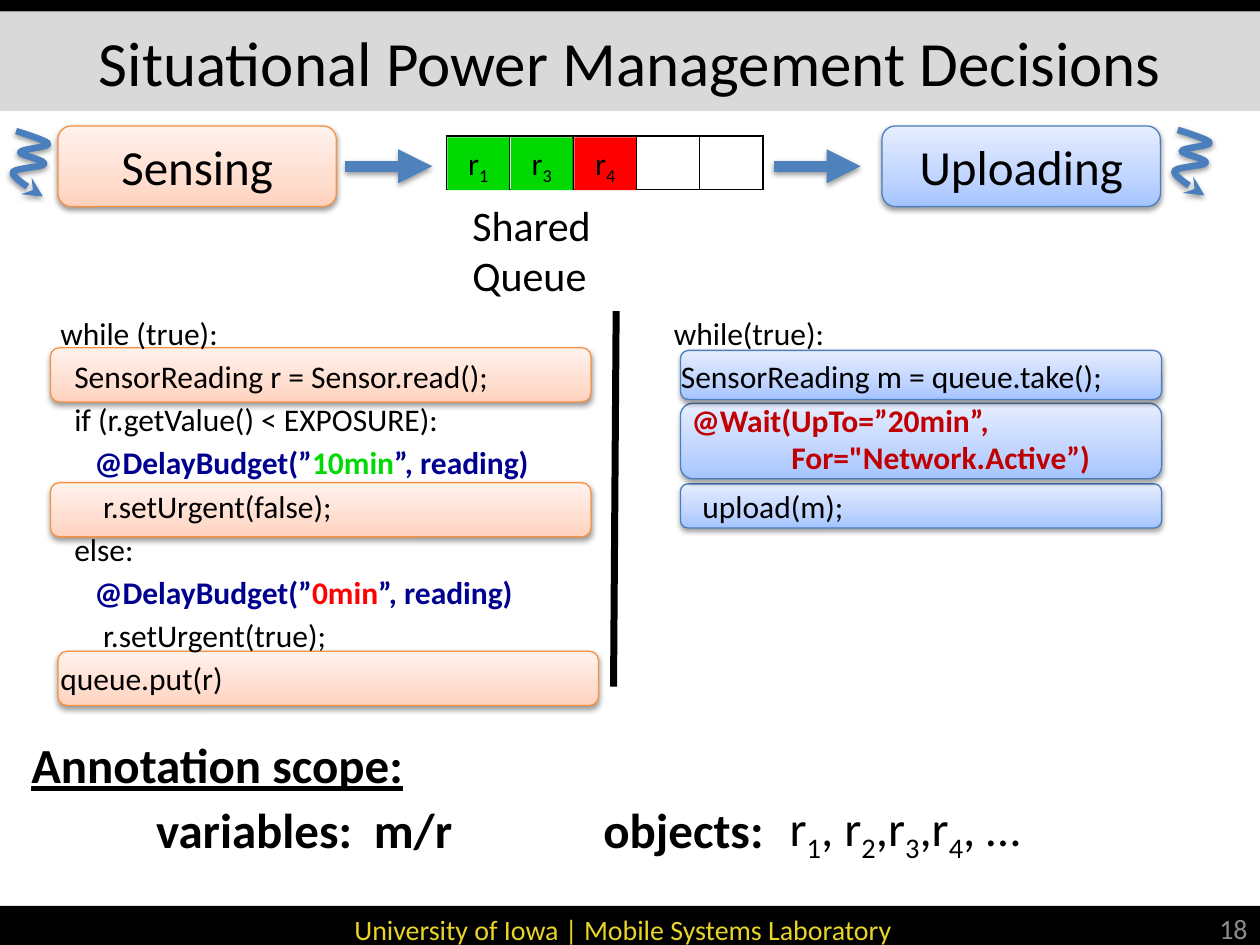
from copy import deepcopy

from lxml import etree
from pptx import Presentation
from pptx.dml.color import RGBColor
from pptx.enum import shapes as kinds, text as txt
from pptx.oxml.ns import qn
from pptx.util import Pt

FONT = "Calibri"
LEFT, CENTER, RIGHT = txt.PP_ALIGN.LEFT, txt.PP_ALIGN.CENTER, txt.PP_ALIGN.RIGHT
RECT, ROUND = kinds.MSO_SHAPE.RECTANGLE, kinds.MSO_SHAPE.ROUNDED_RECTANGLE
ORANGE = ("F69240", ["FFD2BD", "FFDED0", "FFF2ED"])
BLUE = ("4B7EBC", ["A4C4FF", "BFD4FF", "E6EEFF"])
GREEN, RED, NAVY, CRIMSON = "00DA02", "FF0000", "000090", "C00000"
LINE_PITCH = 25

TITLE = "Situational Power Management Decisions"
FOOTER = "University of Iowa | Mobile Systems Laboratory"
STAGES = [("Sensing", 33.1, ORANGE), ("Uploading", 504, BLUE)]
HIGHLIGHTS = [
    (388.8, 276.5, 275, 25.2, BLUE),
    (388.8, 230.4, 275, 43.2, BLUE),
    (33.1, 372.2, 308.9, 31, ORANGE),
    (28.8, 275.8, 308.9, 31, ORANGE),
    (388.8, 200.2, 275, 28.1, BLUE),
    (28.8, 198.7, 308.9, 31, ORANGE),
]
# Each code line: text, indent, number of annotation lines above it
SENSING_CODE = [
    ("while (true):", 0, 0),
    ("SensorReading r = Sensor.read();", 8, 0),
    ("if (r.getValue() < EXPOSURE):", 8, 0),
    ("r.setUrgent(false);", 24.4, 1),
    ("else:", 8, 0),
    ("r.setUrgent(true);", 24.4, 1),
    ("queue.put(r)", 0, 0),
]
UPLOADING_CODE = [
    ("while(true):", 0, 0),
    ("SensorReading m = queue.take();", 4, 0),
    ("upload(m);", 16.3, 2),
]
WAIT = [("@Wait(UpTo=”20min”,", 36), ("For=\"Network.Active”)", 93)]
BUDGETS = [("10min", GREEN, 249.8), ("0min", RED, 324)]
QUEUE_SLOTS = 5
QUEUED = [("1", GREEN), ("3", GREEN), ("4", RED)]
SCOPE = [
    ("Annotation scope:", 10.8, 416.2, 229.7, True),
    ("variables:\tm/r", 82.1, 453.6, 185.8, False),
    ("objects:", 337.7, 453.6, 107.3, False),
]
OBJECTS = [("r", ""), ("1", "sub"), (", r", ""), ("2", "sub"), (",r", ""),
           ("3", "sub"), (",r", ""), ("4", "sub"), (", …", "")]
THREAD_MARKS = [(7.2, 74.9), (671, 74.2)]
THREAD_START = (2, 0)
THREAD_CURVES = [
    ((11.5, 3), (20, 6), (20.2, 7.2)),
    ((21, 9.4), (5, 10), (4.3, 12.2)),
    ((4.3, 13.7), (18.7, 16.6), (18, 18.7)),
    ((17.3, 20.9), (0.7, 20.9), (0, 23.8)),
    ((0, 27.4), (17.3, 37.4), (17.3, 37.4)),
]

prs = Presentation()
prs.slide_width, prs.slide_height = Pt(720), Pt(540)
slide = prs.slides.add_slide(prs.slide_layouts[5])


def rgb(value):
    return RGBColor.from_string(value)


def node(parent, tag, **attrs):
    child = etree.SubElement(parent, qn(tag))
    for key, value in attrs.items():
        child.set(key, str(value))
    return child


def effects(shape, shadow=False, blur=3.1, dist=1.6):
    effect_list = node(shape._element.spPr, "a:effectLst")
    if shadow:
        outer = node(effect_list, "a:outerShdw", blurRad=Pt(blur), dist=Pt(dist),
                     dir=5400000, rotWithShape=0)
        node(node(outer, "a:srgbClr", val="000000"), "a:alpha", val=38000)


def write(shape, paragraphs, size, align=LEFT, bold=False, color="000000",
          anchor=txt.MSO_ANCHOR.TOP):
    frame = shape.text_frame
    frame.word_wrap, frame.vertical_anchor = True, anchor
    for i, runs in enumerate(paragraphs):
        para = frame.add_paragraph() if i else frame.paragraphs[0]
        para.alignment = align
        font = para.font
        font.name, font.size, font.bold = FONT, Pt(size), bold
        font.color.rgb = rgb(color)
        for words, style in [(runs, "")] if isinstance(runs, str) else runs:
            run = para.add_run()
            run.text = words
            if style == "sub":
                run.font._element.set("baseline", "-25000")
            elif style:
                run.font.color.rgb = rgb(style)
    return frame


def indent(para, amount):
    para._p.get_or_add_pPr().set("marL", str(Pt(amount)))


def text_box(x, y, w, h, paragraphs, size, **style):
    box = slide.shapes.add_textbox(Pt(x), Pt(y), Pt(w), Pt(h))
    return write(box, paragraphs, size, **style)


def block(x, y, w, h, fill):
    shape = slide.shapes.add_shape(RECT, Pt(x), Pt(y), Pt(w), Pt(h))
    shape.fill.solid()
    shape.fill.fore_color.rgb = rgb(fill)
    shape.line.fill.background()
    shape.shadow.inherit = False
    return shape


def panel(x, y, w, h, theme):
    edge, stops = theme
    shape = slide.shapes.add_shape(ROUND, Pt(x), Pt(y), Pt(w), Pt(h))
    shape.fill.gradient()
    shape.fill.gradient_angle = 90
    stop_list = shape._element.spPr.find(".//" + qn("a:gsLst"))
    stop_list.insert(1, deepcopy(stop_list[0]))
    for stop, color, position in zip(shape.fill.gradient_stops, stops, (0, 0.35, 1)):
        stop.color.rgb, stop.position = rgb(color), position
    shape.line.color.rgb, shape.line.width = rgb(edge), Pt(0.75)
    effects(shape, shadow=True)
    return shape


def stroke(shape, color, width, head=None, shadow=False):
    shape.line.color.rgb, shape.line.width = rgb(color), Pt(width)
    if head:
        node(shape.line._get_or_add_ln(), "a:tailEnd", type=head)
    effects(shape, shadow)


def line(x1, y1, x2, y2, *style):
    ends = [Pt(v) for v in (x1, y1, x2, y2)]
    stroke(slide.shapes.add_connector(kinds.MSO_CONNECTOR.STRAIGHT, *ends), *style)


def code(x, y, w, h, lines):
    frame = text_box(x, y, w, h, [words for words, _, _ in lines], 18)
    for para, (_, inset, skipped) in zip(frame.paragraphs, lines):
        indent(para, inset)
        para.space_before, para.space_after = Pt(skipped * LINE_PITCH), Pt(3)


def thread_mark(x, y, steps=10):
    start, points = THREAD_START, []
    for a, b, end in THREAD_CURVES:
        for t in (i / steps for i in range(1, steps + 1)):
            weights = ((1 - t) ** 3, 3 * t * (1 - t) ** 2, 3 * t * t * (1 - t), t ** 3)
            points.append([sum(k * p[axis] for k, p in zip(weights, (start, a, b, end)))
                           for axis in (0, 1)])
        start = end
    builder = slide.shapes.build_freeform(Pt(x + THREAD_START[0]), Pt(y + THREAD_START[1]))
    builder.add_line_segments([(Pt(x + px), Pt(y + py)) for px, py in points], close=False)
    shape = builder.convert_to_shape()
    shape.fill.background()
    stroke(shape, "4B7EBC", 3.75, "stealth", True)


title = slide.shapes.title
title.left, title.top, title.width, title.height = Pt(0), Pt(6.5), Pt(720), Pt(56.9)
title.fill.solid()
title.fill.fore_color.rgb = rgb("D9D9D9")
write(title, [TITLE], 36, align=CENTER, anchor=txt.MSO_ANCHOR.MIDDLE)

footer = block(0, 517.7, 720, 26.6, "000000")
write(footer, [FOOTER], 16, align=CENTER, color="E9D428",
      anchor=txt.MSO_ANCHOR.MIDDLE).margin_right = Pt(15)
block(0, -0.7, 720, 7.2, "000000")
text_box(650.2, 517.7, 69.8, 25.9, ["18"], 16, align=RIGHT, color="8C8C8C",
         anchor=txt.MSO_ANCHOR.MIDDLE)

queue = slide.shapes.add_table(1, QUEUE_SLOTS, Pt(255), Pt(77.8), Pt(181), Pt(30.5)).table
queue.first_row = queue.horz_banding = False
for cell in queue.iter_cells():
    cell.fill.background()
    properties = cell._tc.get_or_add_tcPr()
    for i, side in enumerate(("a:lnL", "a:lnR", "a:lnT", "a:lnB")):
        border = node(properties, side, w=Pt(1))
        node(node(border, "a:solidFill"), "a:srgbClr", val="000000")
        properties.insert(i, border)

for highlight in HIGHLIGHTS:
    panel(*highlight)
code(27.4, 175.7, 360, 227.5, SENSING_CODE)
code(378, 175.7, 324, 128.2, UPLOADING_CODE)
wait = text_box(352.1, 225.4, 360, 51.1, [words for words, _ in WAIT], 18,
                bold=True, color=CRIMSON)
for para, (_, inset) in zip(wait.paragraphs, WAIT):
    indent(para, inset)

for name, x, theme in STAGES:
    write(panel(x, 72, 159.1, 46.1, theme), [name], 28, align=CENTER,
          anchor=txt.MSO_ANCHOR.MIDDLE)
for x in (197.3, 442.1):
    line(x, 95, x + 49.7, 95, "4F81BD", 6.5, "triangle", True)
caption = write(block(262.8, 110.2, 151.9, 20.2, "FFFFFF"), ["Shared Queue"], 24)
caption.margin_right = Pt(45)
for mark in THREAD_MARKS:
    thread_mark(*mark)
line(352.1, 177.8, 350.6, 392.4, "000000", 4)

for delay, color, y in BUDGETS:
    runs = [("@DelayBudget(”", ""), (delay, color), ("”, reading)", "")]
    budget = text_box(10.8, y, 313.9, 28.8, [runs], 18, bold=True, color=NAVY)
    indent(budget.paragraphs[0], 36)
for slot, (index, color) in enumerate(QUEUED):
    write(block(255.6 + 36.3 * slot, 78.5, 35.3, 30.2, color),
          [[("r", ""), (index, "sub")]], 18, align=CENTER)

for words, x, y, w, underlined in SCOPE:
    para = text_box(x, y, w, 41, [words], 28, bold=True).paragraphs[0]
    para.font.underline = underlined
    if "\t" in words:
        tabs = etree.Element(qn("a:tabLst"))
        node(tabs, "a:tab", pos=Pt(124.5), algn="l")
        para._p.get_or_add_pPr().insert(0, tabs)
text_box(444.2, 452.2, 153.4, 41, [OBJECTS], 28)

prs.save("out.pptx")
